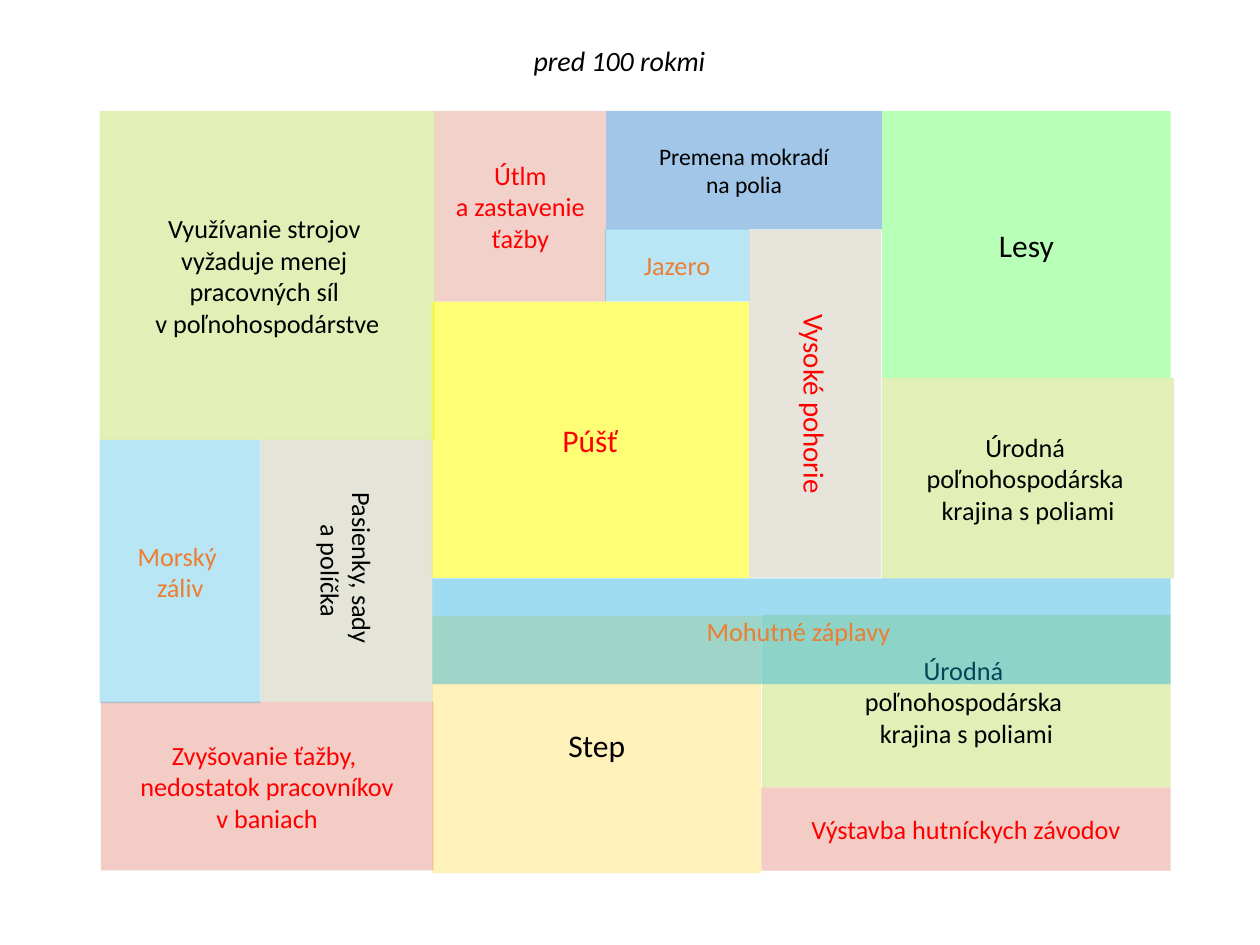
from lxml import etree
from pptx import Presentation
from pptx.dml.color import RGBColor
from pptx.enum import shapes, text
from pptx.oxml.ns import qn
from pptx.util import Pt

FONT = "Calibri"
BLACK = RGBColor(0, 0, 0)
RED = RGBColor(0xFF, 0, 0)
ORANGE = RGBColor(0xED, 0x7D, 0x31)
GREEN = RGBColor(0, 0xFF, 0)
BLUE = RGBColor(0x5B, 0x9B, 0xD5)
LIME = RGBColor(0xD6, 0xEB, 0x99)
YELLOW = RGBColor(0xFF, 0xFF, 0)
BRICK = RGBColor(0xD3, 0x48, 0x31)
GOLD = RGBColor(0xFF, 0xCC, 0)
STONE = RGBColor(0xDB, 0xD9, 0xC9)
WATER = RGBColor(0x11, 0xA9, 0xDF)

FIELDS = "Úrodná \npoľnohospodárska \nkrajina s poliami"

# wording, (left, top, width, height), fill, opacity %, ink, size, rotation
# "\v" breaks a line, "\n" starts a paragraph
AREAS = [
    ("Lesy", (504, 63.4, 165, 152.6), GREEN, 28, BLACK, 18, 0),
    ("Premena mokradí\vna polia", (346.3, 63.4, 157.7, 67.7), BLUE, 57, BLACK, 13.5, 0),
    ("Využívanie strojov \vvyžaduje menej \vpracovných síl \vv poľnohospodárstve",
     (57, 63.4, 191.5, 188), LIME, 70, BLACK, 15, 0),
    ("Púšť", (246.5, 172.5, 181.5, 157.7), YELLOW, 54, RED, 18, 0),
    ("Výstavba hutníckych závodov", (435, 450, 234, 47.5), BRICK, 28, RED, 15, 0),
    ("Step", (247, 352, 188, 147), GOLD, 27, BLACK, 18, 0),
    ("Zvyšovanie ťažby, \vnedostatok pracovníkov\vv baniach",
     (57.6, 401, 190, 96.5), BRICK, 28, RED, 15, 0),
    ("Vysoké pohorie", (366.5, 193, 198.7, 75.6), STONE, 66, RED, 16.5, 90),
    ("Morský \nzáliv", (57, 251.3, 92, 150.5), WATER, 29, ORANGE, 15, 0),
    ("Pasienky, sady \va políčka", (123.2, 277.2, 150, 98), STONE, 70, BLACK, 15, 90),
    (FIELDS, (435.5, 351.4, 233.5, 98.6), LIME, 70, BLACK, 15, 0),
    ("Útlm\va zastavenie\vťažby", (248.4, 63.4, 97.9, 109), BRICK, 25, RED, 15, 0),
    ("Jazero", (345.6, 131, 82.6, 41.2), WATER, 29, ORANGE, 15, 0),
    (FIELDS, (504, 216, 167, 114.5), LIME, 70, BLACK, 15, 0),
    ("Mohutné záplavy ", (247, 330.5, 422, 60.5), WATER, 40, ORANGE, 15, 0),
]


def write(frame, words, size, ink, italic=False):
    frame.text = words
    for para in frame.paragraphs:
        para.alignment = text.PP_ALIGN.CENTER
        font = para.font
        font.name, font.size, font.italic = FONT, Pt(size), italic
        font.color.rgb = ink


def fade(shape, opacity):
    """Set the opacity of a solid fill, in percent."""
    color = shape.fill._xPr.find(qn("a:solidFill"))[0]
    etree.SubElement(color, qn("a:alpha")).set("val", str(opacity * 1000))


def add_area(group, words, box, fill, opacity, ink, size, turn):
    area = group.shapes.add_shape(shapes.MSO_SHAPE.RECTANGLE, *map(Pt, box))
    area.rotation = turn
    area.shadow.inherit = False
    area.line.fill.background()
    area.fill.solid()
    area.fill.fore_color.rgb = fill
    fade(area, opacity)
    frame = area.text_frame
    frame.word_wrap = False
    frame.vertical_anchor = text.MSO_ANCHOR.MIDDLE
    write(frame, words, size, ink)


def add_title(slide, words):
    box = slide.shapes.add_textbox(Pt(84), Pt(21.6), Pt(540), Pt(26.6))
    box.text_frame.word_wrap = True
    box.text_frame.auto_size = text.MSO_AUTO_SIZE.SHAPE_TO_FIT_TEXT
    write(box.text_frame, words, 16, BLACK, italic=True)


def main():
    deck = Presentation()
    deck.slide_width, deck.slide_height = Pt(720), Pt(540)
    slide = deck.slides.add_slide(deck.slide_layouts[6])
    add_title(slide, "pred 100 rokmi")
    land = slide.shapes.add_group_shape()
    for area in AREAS:
        add_area(land, *area)
    deck.save("out.pptx")


if __name__ == "__main__":
    main()
